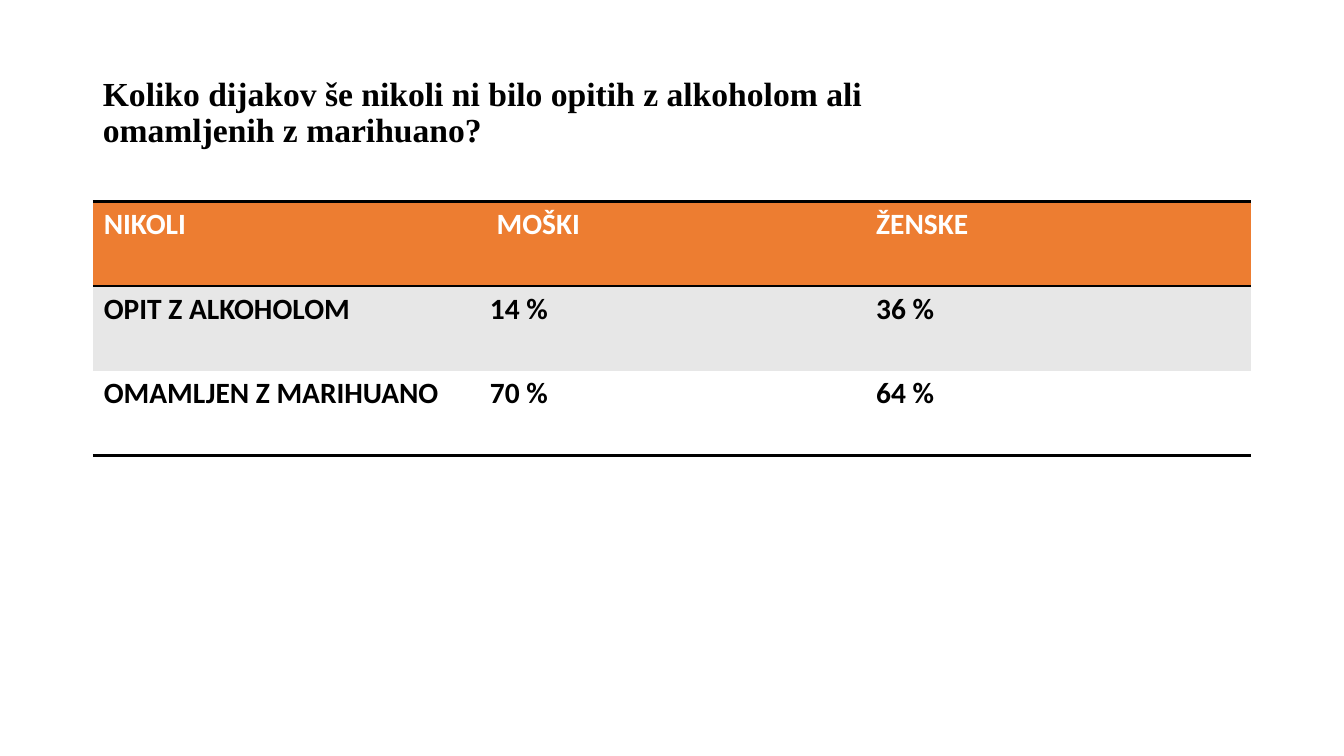
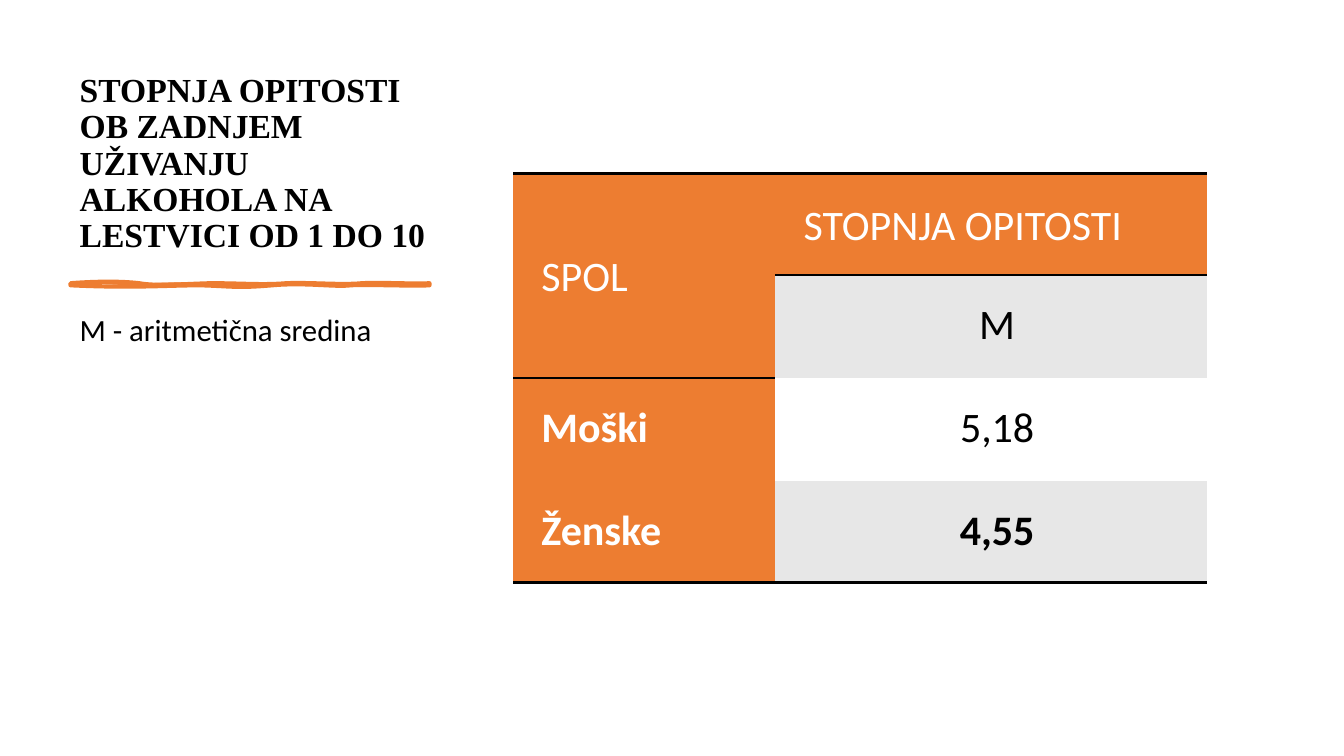
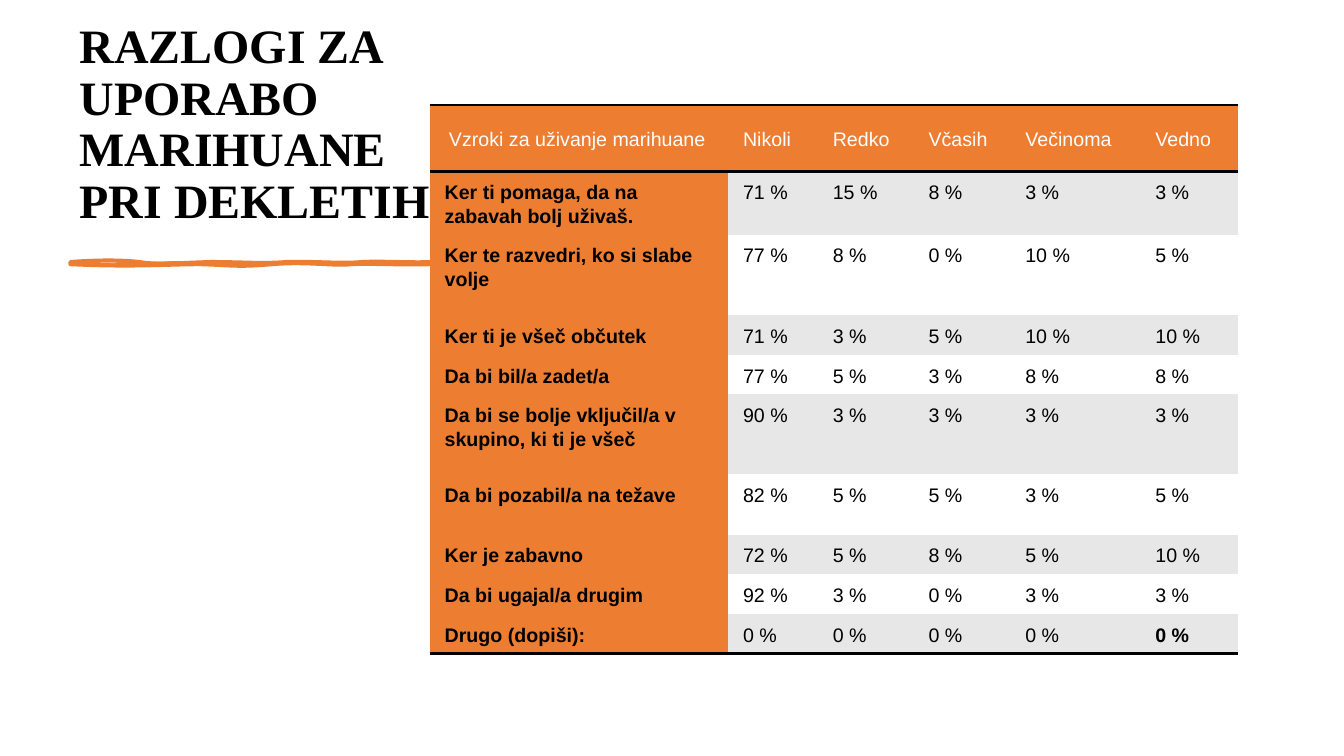
from lxml.etree import SubElement
from pptx import Presentation
from pptx.dml.color import RGBColor
from pptx.enum.text import MSO_ANCHOR as Anchor, MSO_AUTO_SIZE as AutoSize, PP_ALIGN as Align
from pptx.oxml.ns import qn
from pptx.util import Emu, Pt

PX = 9144
COLORS = {"accent": "ED7D31", "band": "E7E7E7", "paper": "FFFFFF", "ink": "000000"}
TITLE_ONLY, TITLE_AND_BODY = 5, 1
NO_STYLE = "{2D5ABB26-0587-4C30-8999-92F81FD0307C}"

BRUSH_LEFT, BRUSH_WIDTH, BRUSH_HEIGHT = 70, 356, 2
BRUSH_EDGE = [
    (27, -2, 51, -2, 68, 0), (85, 3, 107, 1, 139, 0), (171, 0, 190, 2, 214, 0),
    (238, -1, 269, 2, 289, 0), (309, -1, 342, 1, 356, 0), (356, 1, 356, 2, 356, 2),
    (338, 3, 294, 1, 278, 2), (262, 4, 234, -1, 200, 2), (165, 5, 161, 3, 129, 2),
    (96, 2, 62, 5, 0, 2), (0, 2, 0, 1, 0, 0),
]
BRUSH_BODY = [
    (32, 3, 40, 1, 68, 0), (96, 0, 99, -2, 129, 0), (158, 3, 191, 2, 207, 0),
    (223, -1, 257, 3, 274, 0), (292, -2, 327, 4, 356, 0), (356, 1, 356, 2, 356, 2),
    (342, 2, 302, 5, 285, 2), (268, 0, 239, 3, 207, 2), (174, 2, 170, 1, 146, 2),
    (123, 4, 109, 2, 75, 2), (41, 3, 22, 2, 0, 2), (0, 2, 0, 1, 0, 0),
]


def px(length):
    return Emu(length * PX)


def color(name):
    return RGBColor.from_string(COLORS[name])


def write(frame, text, size=24, font="Calibri", ink="ink", bold=False,
          align=Align.LEFT, spacing=1.0, after=0):
    frame.text = text
    frame.word_wrap = True
    for paragraph in frame.paragraphs:
        paragraph.alignment = align
        paragraph.line_spacing = spacing
        paragraph.space_before = Pt(0)
        paragraph.space_after = Pt(after)
        for run in paragraph.runs:
            run.font.size = Pt(size)
            run.font.name = font
            run.font.bold = bold
            run.font.color.rgb = color(ink)


def add_point(parent, x, y):
    SubElement(parent, qn("a:pt"), x=str(x), y=str(y))


def add_contour(contours, curves, **flags):
    contour = SubElement(contours, qn("a:path"), w=str(BRUSH_WIDTH), h=str(BRUSH_HEIGHT), **flags)
    add_point(SubElement(contour, qn("a:moveTo")), 0, 0)
    for x1, y1, x2, y2, x3, y3 in curves:
        bend = SubElement(contour, qn("a:cubicBezTo"))
        for x, y in ((x1, y1), (x2, y2), (x3, y3)):
            add_point(bend, x, y)
    SubElement(contour, qn("a:close"))


class Deck:
    def __init__(self):
        self.prs = Presentation()
        self.prs.slide_width, self.prs.slide_height = px(1333), px(750)
        self.slide = None

    def new_slide(self, layout=TITLE_ONLY):
        self.slide = self.prs.slides.add_slide(self.prs.slide_layouts[layout])

    def place(self, holder, box, text, anchor, **format):
        holder.left, holder.top, holder.width, holder.height = map(px, box)
        holder.text_frame.auto_size = AutoSize.NONE
        holder.text_frame.vertical_anchor = anchor
        write(holder.text_frame, text, spacing=0.9, **format)

    def title(self, box, text, size=24, anchor=Anchor.BOTTOM):
        self.place(self.slide.shapes.title, box, text, anchor,
                   size=size, font="Times New Roman", bold=True)

    def body(self, box, text, size):
        holder = self.slide.placeholders[1]
        self.place(holder, box, text, Anchor.TOP, size=size, after=8)
        for paragraph in holder.text_frame.paragraphs:
            props = paragraph._p.get_or_add_pPr()
            props.set("marL", "0")
            props.set("indent", "0")
            SubElement(props, qn("a:buNone"))

    def brush_rule(self, top):
        right, bottom = BRUSH_LEFT + BRUSH_WIDTH, top + BRUSH_HEIGHT
        builder = self.slide.shapes.build_freeform(px(BRUSH_LEFT), px(top))
        builder.add_line_segments([(px(right), px(top)), (px(right), px(bottom)),
                                   (px(BRUSH_LEFT), px(bottom))])
        stroke = builder.convert_to_shape()
        stroke.shadow.inherit = False
        stroke.fill.solid()
        stroke.fill.fore_color.rgb = color("accent")
        stroke.line.color.rgb = color("accent")
        stroke.line.width = Pt(3)
        contours = next(stroke._element.iter(qn("a:pathLst")))
        contours.clear()
        add_contour(contours, BRUSH_EDGE, fill="none")
        add_contour(contours, BRUSH_BODY, stroke="0")

    def border(self, cell, side):
        line = SubElement(cell._tc.get_or_add_tcPr(), qn(f"a:ln{side}"), w=str(Pt(2)))
        SubElement(SubElement(line, qn("a:solidFill")), qn("a:srgbClr"), val=COLORS["ink"])

    def table(self, left, top, widths, heights, rows, look, head_column=True):
        frame = self.slide.shapes.add_table(len(heights), len(widths), px(left), px(top),
                                            px(sum(widths)), px(sum(heights)))
        grid = frame.table
        grid.horz_banding = False
        for style in frame._element.iter(qn("a:tableStyleId")):
            style.text = NO_STYLE
        for column, width in zip(grid.columns, widths):
            column.width = px(width)
        last = len(rows) - 1
        for r, texts in enumerate(rows):
            grid.rows[r].height = px(heights[r])
            for c, text in enumerate(texts):
                cell = grid.cell(r, c)
                format = look(r, c)
                margins = format.pop("margins")
                cell.margin_left, cell.margin_top, cell.margin_right, cell.margin_bottom = map(px, margins)
                cell.vertical_anchor = format.pop("anchor", Anchor.TOP)
                if r == 0:
                    self.border(cell, "T")
                if r in (0, last):
                    self.border(cell, "B")
                head = r == 0 or (head_column and c == 0)
                cell.fill.solid()
                cell.fill.fore_color.rgb = color("accent" if head else "band" if r % 2 else "paper")
                write(cell.text_frame, text, **format)
        return grid


def never_look(row, col):
    return dict(margins=(11, 5, 11, 5), size=21, bold=True, ink="ink" if row else "paper")


def level_look(row, col):
    return dict(
        margins=(28, 21, 16, 21), size=30, spacing=1.07, after=8,
        anchor=Anchor.TOP if row else Anchor.MIDDLE,
        ink="ink" if row and col else "paper",
        bold=(row > 1 and col == 0) or row == 3,
        align=Align.CENTER if row and col else Align.LEFT)


def reason_look(row, col):
    if col:
        align = Align.JUSTIFY
    else:
        align = Align.LEFT if row else Align.RIGHT
    return dict(
        margins=(15, 9, 3 if col else 22, 7), size=14, font="Arial", spacing=1.07, after=8,
        anchor=Anchor.TOP if row else Anchor.MIDDLE,
        ink="ink" if row else "paper",
        bold=(row > 0 and col == 0) or (row, col) == (9, 5),
        align=align)


REASONS = [
    ("Ker ti pomaga, da na zabavah bolj uživaš.", 60, (71, 15, 8, 3, 3)),
    ("Ker te razvedri, ko si slabe volje", 80, (77, 8, 0, 10, 5)),
    ("Ker ti je všeč občutek", 39, (71, 3, 5, 10, 10)),
    ("Da bi bil/a zadet/a", 39, (77, 5, 3, 8, 8)),
    ("Da bi se bolje vključil/a v skupino, ki ti je všeč", 79, (90, 3, 3, 3, 3)),
    ("Da bi pozabil/a na težave", 60, (82, 5, 5, 3, 5)),
    ("Ker je zabavno", 39, (72, 5, 8, 5, 10)),
    ("Da bi ugajal/a drugim", 39, (92, 3, 0, 3, 3)),
    ("Drugo (dopiši):", 39, (0, 0, 0, 0, 0)),
]


def main():
    deck = Deck()

    deck.new_slide()
    deck.title((92, 40, 775, 145),
               "Koliko dijakov še nikoli ni bilo opitih z alkoholom ali omamljenih z marihuano?",
               anchor=Anchor.MIDDLE)
    deck.table(92, 200, [383] * 3, [84] * 3, [
        ("NIKOLI", " MOŠKI", "ŽENSKE"),
        ("OPIT Z ALKOHOLOM", "14 %", "36 %"),
        ("OMAMLJEN Z MARIHUANO", "70 %", "64 %"),
    ], never_look, head_column=False)

    deck.new_slide(TITLE_AND_BODY)
    deck.title((69, 70, 375, 188),
               "STOPNJA OPITOSTI OB ZADNJEM UŽIVANJU ALKOHOLA NA LESTVICI OD 1 DO 10")
    deck.brush_rule(281)
    deck.body((69, 307, 375, 373), "M - aritmetična sredina", size=22)
    levels = deck.table(509, 172, [260, 428], [101, 102, 102, 101], [
        ("SPOL", "STOPNJA OPITOSTI"),
        ("", "M"),
        ("Moški", "5,18"),
        ("Ženske", "4,55"),
    ], level_look)
    levels.cell(0, 0).merge(levels.cell(1, 0))

    deck.new_slide()
    deck.title((69, 70, 527, 162), "RAZLOGI ZA UPORABO MARIHUANE\vPRI DEKLETIH", size=34.2)
    deck.brush_rule(260)
    header = ("Vzroki za uživanje marihuane", "Nikoli", "Redko", "Včasih", "Večinoma", "Vedno")
    shares = [(reason, *(f"{share} %" for share in row)) for reason, _, row in REASONS]
    deck.table(426, 104, [296, 89, 95, 96, 129, 97], [66] + [height for _, height, _ in REASONS],
               [header] + shares, reason_look)

    deck.prs.save("out.pptx")


if __name__ == "__main__":
    main()
